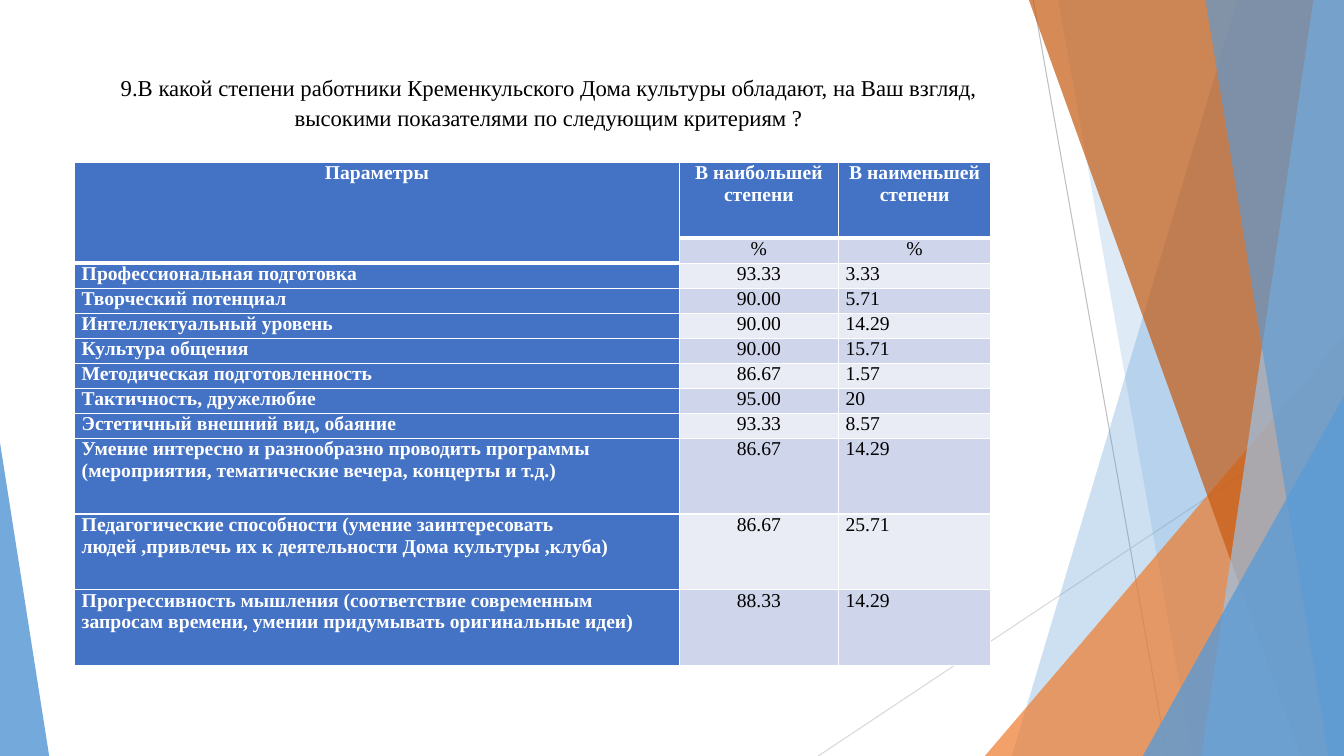
from dataclasses import dataclass

import lxml.etree
import pptx
import pptx.dml.color
import pptx.enum.shapes
import pptx.enum.text
import pptx.oxml.ns
import pptx.util

Cm = pptx.util.Cm
Pt = pptx.util.Pt
qn = pptx.oxml.ns.qn
PP_ALIGN = pptx.enum.text.PP_ALIGN


@dataclass(frozen=True)
class Theme:
    font: str = "Times New Roman"
    title_size: float = 16.2
    table_size: float = 14
    text: str = "000000"
    white: str = "FFFFFF"
    header: str = "4472C4"
    bands: tuple = ("CFD5EA", "E9EBF5")
    blue: str = "5B9BD5"
    pale_blue: str = "9DC3E6"
    orange: str = "ED7D31"
    rust: str = "C55A11"
    gray: str = "BFBFBF"
    light_gray: str = "D9D9D9"


THEME = Theme()
WIDTH, HEIGHT = 33.87, 19.05
TITLE = ("9.В какой степени работники Кременкульского Дома культуры обладают, "
         "на Ваш взгляд, высокими показателями по следующим критериям ?")
HEADINGS = ("Параметры", "В наибольшей степени", "В наименьшей степени")
CRITERIA = (
    ("Профессиональная подготовка", "93.33", "3.33"),
    ("Творческий потенциал", "90.00", "5.71"),
    ("Интеллектуальный уровень", "90.00", "14.29"),
    ("Культура общения", "90.00", "15.71"),
    ("Методическая подготовленность", "86.67", "1.57"),
    ("Тактичность, дружелюбие", "95.00", "20"),
    ("Эстетичный внешний вид, обаяние", "93.33", "8.57"),
    ("Умение интересно и разнообразно проводить программы "
     "(мероприятия, тематические вечера, концерты и т.д.)", "86.67", "14.29"),
    ("Педагогические способности (умение заинтересовать "
     "людей ,привлечь их к деятельности Дома культуры ,клуба)", "86.67", "25.71"),
    ("Прогрессивность мышления (соответствие современным "
     "запросам времени, умении придумывать оригинальные идеи)", "88.33", "14.29"),
)
COLUMN_WIDTHS = (15.24, 4.01, 3.84)
SHORT_ROW, TALL_ROW = 0.63, 1.91


def rgb(color):
    return pptx.dml.color.RGBColor.from_string(color)


def paint(shape, color, opacity):
    shape.shadow.inherit = False
    shape.line.fill.background()
    shape.fill.solid()
    shape.fill.fore_color.rgb = rgb(color)
    tint = shape.fill._xPr.find(".//" + qn("a:srgbClr"))
    lxml.etree.SubElement(tint, qn("a:alpha"), val=str(opacity * 1000))


def add_ray(slide, start, end, color):
    ray = slide.shapes.add_connector(
        pptx.enum.shapes.MSO_CONNECTOR.STRAIGHT, *map(Cm, start + end))
    ray.line.color.rgb = rgb(color)
    ray.line.width = Pt(0.75)
    lxml.etree.SubElement(ray._element.spPr, qn("a:effectLst"))


def add_facet(slide, top_left, bottom_left, color, opacity):
    corners = [(top_left, 0), (WIDTH, 0), (WIDTH, HEIGHT), (bottom_left, HEIGHT)]
    points = [(Cm(x), Cm(y)) for x, y in corners]
    outline = slide.shapes.build_freeform(*points[0], scale=1.0)
    outline.add_line_segments(points[1:], close=True)
    paint(outline.convert_to_shape(), color, opacity)


def add_corner(slide, left, top, width, apex, color, opacity):
    corner = slide.shapes.add_shape(
        pptx.enum.shapes.MSO_SHAPE.ISOSCELES_TRIANGLE,
        Cm(left), Cm(top), Cm(width), Cm(HEIGHT - top))
    corner.adjustments[0] = apex
    paint(corner, color, opacity)


def add_backdrop(slide):
    add_ray(slide, (26.04, 0), (29.41, HEIGHT), THEME.gray)
    add_ray(slide, (WIDTH, 10.24), (20.62, HEIGHT), THEME.light_gray)
    add_facet(slide, 31.19, 25.5, THEME.blue, 30)
    add_facet(slide, 26.67, 30.05, THEME.blue, 20)
    add_corner(slide, 24.82, 8.46, WIDTH - 24.82, 1, THEME.orange, 72)
    add_facet(slide, 25.93, 32.79, THEME.rust, 70)
    add_facet(slide, 33.1, 30.28, THEME.pale_blue, 70)
    add_facet(slide, 30.38, 33.48, THEME.blue, 65)
    add_corner(slide, 28.8, 9.98, WIDTH - 28.8, 1, THEME.blue, 80)
    add_corner(slide, 0, 11.15, 1.24, 0, THEME.blue, 85)


def style_paragraph(paragraph, size, color, align, bold=False):
    paragraph.alignment = align
    paragraph.font.name = THEME.font
    paragraph.font.size = Pt(size)
    paragraph.font.bold = bold
    paragraph.font.color.rgb = rgb(color)


def add_title(slide):
    frame = slide.shapes.add_textbox(Cm(1.88), Cm(1.7), Cm(23.88), Cm(2.39)).text_frame
    frame.word_wrap = True
    question = frame.paragraphs[0]
    question.text = TITLE
    question.line_spacing = 1.07
    style_paragraph(question, THEME.title_size, THEME.text, PP_ALIGN.CENTER)


def set_borders(cell, bottom):
    properties = cell._tc.get_or_add_tcPr()
    for index, (side, width) in enumerate(
            (("lnL", 1), ("lnR", 1), ("lnT", 1), ("lnB", bottom))):
        border = lxml.etree.Element(qn("a:" + side), w=str(Pt(width)))
        fill = lxml.etree.SubElement(border, qn("a:solidFill"))
        lxml.etree.SubElement(fill, qn("a:srgbClr"), val=THEME.white)
        properties.insert(index, border)


def fill_cell(cell, text, row, column):
    heading = row == 0 or column == 0
    centered = row < 2 or column == 1
    cell.margin_left = cell.margin_right = Cm(0.18)
    cell.margin_top = cell.margin_bottom = 0
    cell.fill.solid()
    cell.fill.fore_color.rgb = rgb(THEME.header if heading else THEME.bands[(row - 1) % 2])
    set_borders(cell, 3 if row == 0 or (row == 1 and column == 0) else 1)
    cell.text = text
    style_paragraph(cell.text_frame.paragraphs[0], THEME.table_size,
                    THEME.white if heading else THEME.text,
                    PP_ALIGN.CENTER if centered else PP_ALIGN.LEFT, heading)


def add_ratings(slide):
    rows = (HEADINGS, ("", "%", "%")) + CRITERIA
    heights = [TALL_ROW] + [SHORT_ROW] * 8 + [TALL_ROW] * 3
    ratings = slide.shapes.add_table(
        len(rows), len(HEADINGS), Cm(1.88), Cm(4.09),
        Cm(sum(COLUMN_WIDTHS)), Cm(sum(heights))).table
    for column, width in zip(ratings.columns, COLUMN_WIDTHS):
        column.width = Cm(width)
    for row, height in zip(ratings.rows, heights):
        row.height = Cm(height)
    for r, texts in enumerate(rows):
        for c, text in enumerate(texts):
            fill_cell(ratings.cell(r, c), text, r, c)
    ratings.cell(0, 0).merge(ratings.cell(1, 0))


def main():
    deck = pptx.Presentation()
    deck.slide_width, deck.slide_height = Cm(WIDTH), Cm(HEIGHT)
    slide = deck.slides.add_slide(deck.slide_layouts[6])
    add_backdrop(slide)
    add_title(slide)
    add_ratings(slide)
    deck.save("out.pptx")


if __name__ == "__main__":
    main()
